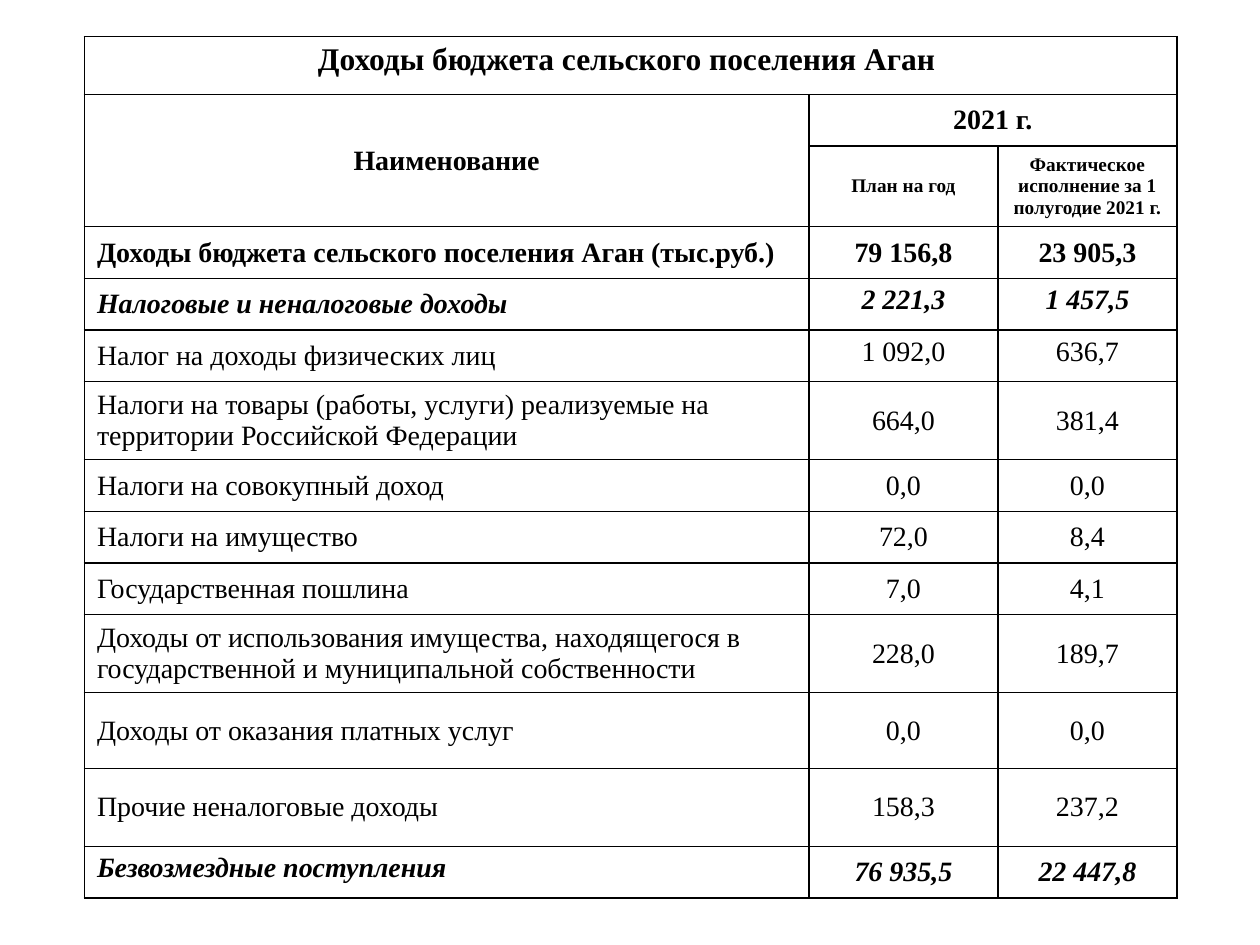
from lxml import etree
from pptx import Presentation, util as u
from pptx.dml.color import RGBColor
from pptx.enum import text
from pptx.oxml import ns

COLORS = {"ink": "000000", "paper": "FFFFFF"}
FONT = "Times New Roman"
COLUMN_WIDTHS = [5.75, 1.5, 1.42]
ROW_HEIGHTS = [0.46, 0.41, 0.64, 0.41, 0.41, 0.41, 0.62,
               0.41, 0.41, 0.41, 0.62, 0.6, 0.62, 0.41]
HEADINGS = [
    (0, 0, 0, 2, "Доходы бюджета сельского поселения Аган ", 18),
    (1, 0, 2, 0, "Наименование", 16),
    (1, 1, 1, 2, "2021 г.", 16),
    (2, 1, 2, 1, "План на год", 11),
    (2, 2, 2, 2, "Фактическое исполнение за 1 полугодие 2021 г.", 11),
]
FIRST_INCOME_ROW = 3
INCOME = [
    ("Доходы бюджета сельского поселения Аган (тыс.руб.)", "79 156,8", "23 905,3"),
    ("Налоговые и неналоговые доходы", "2 221,3", "1 457,5"),
    ("Налог на доходы физических лиц", "1 092,0", "636,7"),
    ("Налоги на товары (работы, услуги) реализуемые на территории Российской Федерации",
     "664,0", "381,4"),
    ("Налоги на совокупный доход", "0,0", "0,0"),
    ("Налоги на имущество", "72,0", "8,4"),
    ("Государственная пошлина", "7,0", "4,1"),
    ("Доходы от использования имущества, находящегося в государственной "
     "и муниципальной собственности", "228,0", "189,7"),
    ("Доходы от оказания платных услуг", "0,0", "0,0"),
    ("Прочие неналоговые доходы", "158,3", "237,2"),
    ("Безвозмездные поступления", "76 935,5", "22 447,8"),
]
BOLD_ROWS = {3, 4, 13}
ITALIC_ROWS = {4, 13}
TOP_CELLS = {(0, 0), (4, 1), (4, 2), (5, 1), (5, 2), (13, 0)}


def style_cell(cell):
    cell.fill.solid()
    cell.fill.fore_color.rgb = RGBColor.from_string(COLORS["paper"])
    properties = cell._tc.get_or_add_tcPr()
    for index, side in enumerate("LRTB"):
        border = etree.Element(ns.qn(f"a:ln{side}"), w=str(u.Pt(1)))
        fill = etree.SubElement(border, ns.qn("a:solidFill"))
        etree.SubElement(fill, ns.qn("a:srgbClr"), val=COLORS["ink"])
        properties.insert(index, border)


def write_cell(table, row, column, words, size=16, bold=False, italic=False, centered=True):
    cell = table.cell(row, column)
    cell.text_frame.text = words
    anchor = text.MSO_ANCHOR
    cell.vertical_anchor = anchor.TOP if (row, column) in TOP_CELLS else anchor.MIDDLE
    para = cell.text_frame.paragraphs[0]
    para.alignment = text.PP_ALIGN.CENTER if centered else text.PP_ALIGN.LEFT
    font = para.runs[0].font
    font.name, font.size = FONT, u.Pt(size)
    font.bold, font.italic = bold, italic
    font.color.rgb = RGBColor.from_string(COLORS["ink"])


def add_grid(page):
    frame = page.shapes.add_table(
        len(ROW_HEIGHTS), len(COLUMN_WIDTHS), u.Inches(0.67), u.Inches(0.29),
        u.Inches(sum(COLUMN_WIDTHS)), u.Inches(sum(ROW_HEIGHTS)))
    table = frame.table
    table.first_row = table.horz_banding = False
    for column, width in zip(table.columns, COLUMN_WIDTHS):
        column.width = u.Inches(width)
    for row, height in zip(table.rows, ROW_HEIGHTS):
        row.height = u.Inches(height)
    for cell in table.iter_cells():
        style_cell(cell)
    return table


def fill_headings(table):
    for top, left, bottom, right, words, size in HEADINGS:
        if (top, left) != (bottom, right):
            table.cell(top, left).merge(table.cell(bottom, right))
        write_cell(table, top, left, words, size, bold=True)


def fill_income(table):
    for row, entry in enumerate(INCOME, FIRST_INCOME_ROW):
        for column, words in enumerate(entry):
            write_cell(table, row, column, words, bold=row in BOLD_ROWS,
                       italic=row in ITALIC_ROWS, centered=column > 0)


def main():
    deck = Presentation()
    deck.slide_width, deck.slide_height = u.Inches(10), u.Inches(7.5)
    page = deck.slides.add_slide(deck.slide_layouts[6])
    table = add_grid(page)
    fill_headings(table)
    fill_income(table)
    deck.save("out.pptx")


if __name__ == "__main__":
    main()
